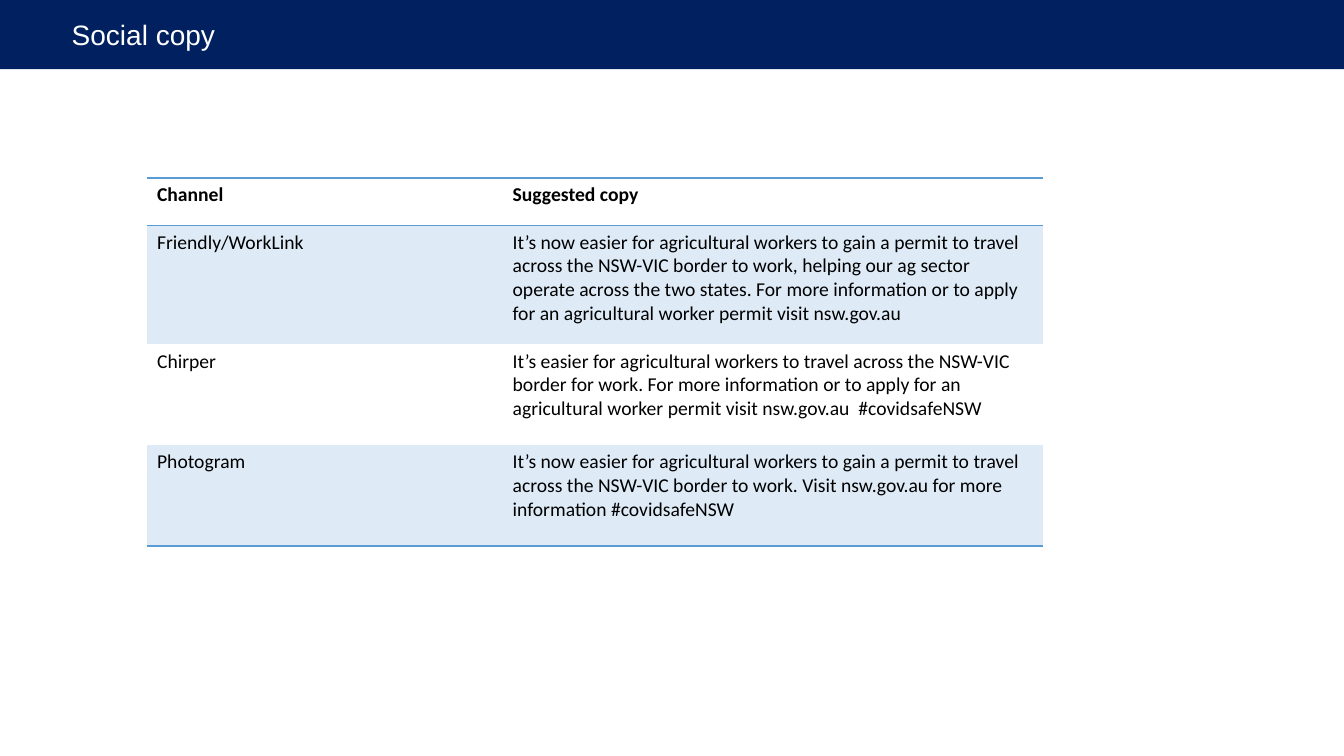
from lxml import etree
from pptx import Presentation
from pptx.dml.color import RGBColor
from pptx.enum.shapes import MSO_SHAPE
from pptx.enum.text import MSO_ANCHOR, PP_ALIGN
from pptx.oxml.ns import qn
from pptx.util import Pt

RECT = MSO_SHAPE.RECTANGLE
MIDDLE = MSO_ANCHOR.MIDDLE
LEFT = PP_ALIGN.LEFT

NAVY = RGBColor(0x00, 0x20, 0x60)
BLUE = RGBColor(0x5B, 0x9B, 0xD5)
PALE = RGBColor(0xDE, 0xEB, 0xF7)
WHITE = RGBColor(0xFF, 0xFF, 0xFF)
BLACK = RGBColor(0x00, 0x00, 0x00)
NO_GRID = "{2D5ABB26-0587-4C30-8999-92F81FD0307C}"


def style(font, color, **values):
    for name, value in values.items():
        setattr(font, name, value)
    font.color.rgb = color


def rule(cell, side):
    """Add a blue border; call for the bottom side before the top one."""
    line = etree.Element(qn("a:" + side), w=str(Pt(1)))
    fill = etree.SubElement(line, qn("a:solidFill"))
    etree.SubElement(fill, qn("a:srgbClr"), val=str(BLUE))
    cell._tc.get_or_add_tcPr().insert(0, line)


prs = Presentation()
prs.slide_width, prs.slide_height = Pt(960), Pt(540)
slide = prs.slides.add_slide(prs.slide_layouts[6])

# Title band
band = slide.shapes.add_shape(RECT, 0, 0, prs.slide_width, Pt(49.5))
band.shadow.inherit = False
band.fill.solid()
band.fill.fore_color.rgb = NAVY
band.line.fill.background()
frame = band.text_frame
frame.margin_left = Pt(51.2)
frame.vertical_anchor = MIDDLE
title = frame.paragraphs[0]
title.text = "Social copy"
title.alignment = LEFT
style(title.font, WHITE, name="Arial", size=Pt(20))

# Copy for each channel
ROWS = [
    ("Channel", "Suggested copy"),
    ("Friendly/WorkLink",
     "It’s now easier for agricultural workers to gain a permit to travel "
     "across the NSW-VIC border to work, helping our ag sector operate across "
     "the two states. For more information or to apply for an agricultural "
     "worker permit visit nsw.gov.au"),
    ("Chirper",
     "It’s easier for agricultural workers to travel across the NSW-VIC "
     "border for work. For more information or to apply for an agricultural "
     "worker permit visit nsw.gov.au  #covidsafeNSW"),
    ("Photogram",
     "It’s now easier for agricultural workers to gain a permit to travel "
     "across the NSW-VIC border to work. Visit nsw.gov.au for more "
     "information #covidsafeNSW"),
]
WIDTHS = [254, 386]
HEIGHTS = [33.8, 85, 72, 72]

# Table
grid = slide.shapes.add_table(len(ROWS), len(WIDTHS), Pt(105), Pt(127.2),
                              Pt(sum(WIDTHS)), Pt(sum(HEIGHTS)))
table = grid.table
table._tbl.tblPr.find(qn("a:tableStyleId")).text = NO_GRID
for col, width in zip(table.columns, WIDTHS):
    col.width = Pt(width)
for r, (texts, height) in enumerate(zip(ROWS, HEIGHTS)):
    table.rows[r].height = Pt(height)
    for c, text in enumerate(texts):
        cell = table.cell(r, c)
        para = cell.text_frame.paragraphs[0]
        para.text = text
        style(para.font, BLACK, name="Calibri", size=Pt(14), bold=r == 0)
        if r % 2:
            cell.fill.solid()
            cell.fill.fore_color.rgb = PALE
        else:
            cell.fill.background()
        if r in (0, len(ROWS) - 1):
            rule(cell, "lnB")
        if r == 0:
            rule(cell, "lnT")

prs.save("out.pptx")
